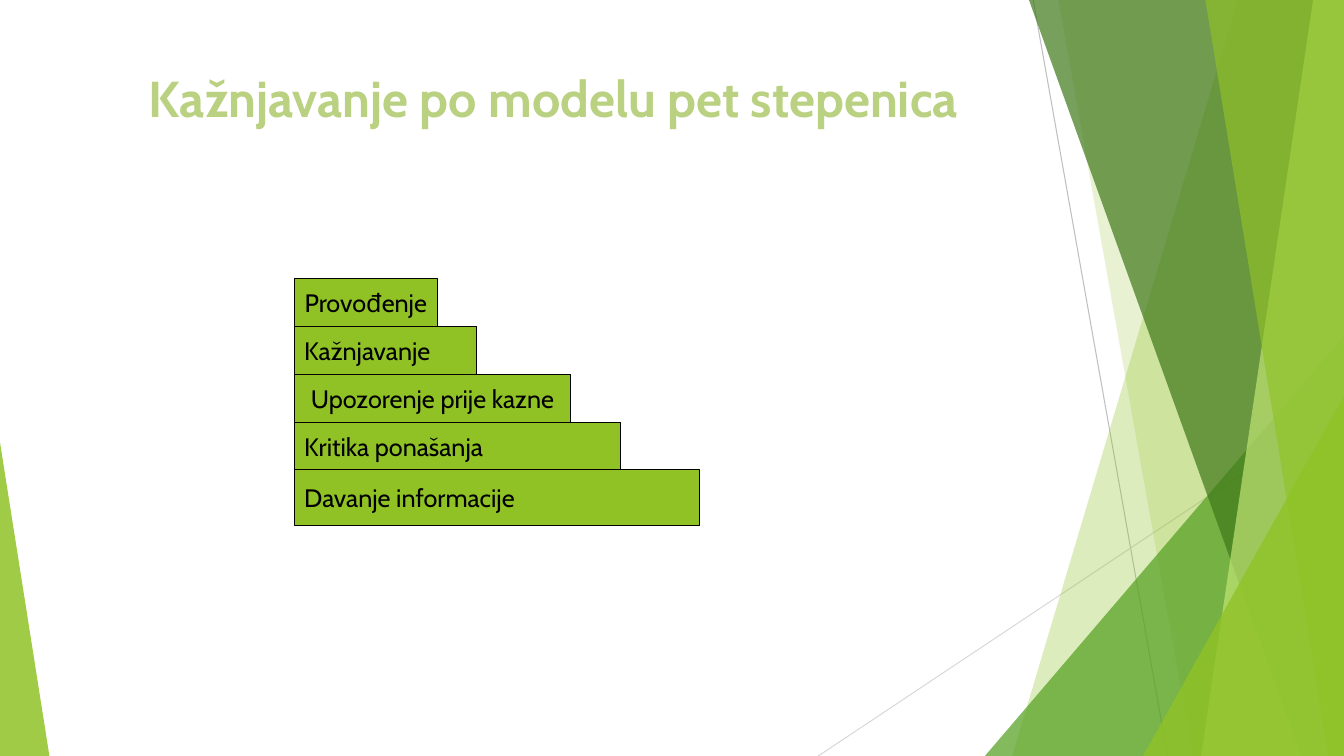
"""Build a slide showing the five steps of punishment as a staircase of bars."""
import dataclasses

import lxml.etree
import pptx
import pptx.dml.color
import pptx.enum.shapes
import pptx.enum.text
import pptx.oxml.ns
import pptx.util

Pt = pptx.util.Pt
ALIGN = pptx.enum.text.PP_ALIGN
ANCHOR = pptx.enum.text.MSO_ANCHOR
SHAPE = pptx.enum.shapes.MSO_SHAPE


@dataclasses.dataclass(frozen=True)
class Theme:
    font: str = "Cabin"
    title_size: float = 36
    step_size: float = 18
    line_width: float = 0.75
    title: str = "B9D181"
    text: str = "000000"
    green: str = "90C226"
    leaf: str = "54A021"
    forest: str = "3F7819"
    lime: str = "C0E474"
    steep_line: str = "BFBFBF"
    flat_line: str = "D9D9D9"


def color(value):
    return pptx.dml.color.RGBColor.from_string(value)


def apply_format(target, values):
    for name, value in values.items():
        setattr(target, name, value)


class SlideBuilder:
    def __init__(self, presentation, theme):
        self.theme = theme
        self.width = presentation.slide_width.pt
        self.height = presentation.slide_height.pt
        self.slide = presentation.slides.add_slide(presentation.slide_layouts[5])

    def set_text(self, shape, text, size, text_color, align, bold, frame_format):
        frame = shape.text_frame
        frame.text = text
        apply_format(frame, frame_format)
        paragraph = frame.paragraphs[0]
        paragraph.alignment = align
        font = paragraph.runs[0].font
        apply_format(font, {"name": self.theme.font, "size": Pt(size), "bold": bold})
        font.color.rgb = color(text_color)

    def paint(self, shape, fill, opacity=100):
        shape.shadow.inherit = False
        shape.fill.solid()
        shape.fill.fore_color.rgb = color(fill)
        shape.line.fill.background()
        if opacity < 100:
            qualified = pptx.oxml.ns.qn
            color_element = shape.element.spPr.find(
                f"{qualified('a:solidFill')}/{qualified('a:srgbClr')}")
            alpha = lxml.etree.SubElement(color_element, qualified("a:alpha"))
            alpha.set("val", str(opacity * 1000))

    def title(self, text, left, top, width, height):
        shape = self.slide.shapes.title
        apply_format(shape, {"left": Pt(left), "top": Pt(top),
                             "width": Pt(width), "height": Pt(height)})
        self.set_text(shape, text, self.theme.title_size, self.theme.title, ALIGN.CENTER,
                      True, {"vertical_anchor": ANCHOR.TOP, "word_wrap": True})

    def line(self, start, end, line_color):
        connector = self.slide.shapes.add_connector(
            pptx.enum.shapes.MSO_CONNECTOR.STRAIGHT, *map(Pt, start + end))
        connector.line.color.rgb = color(line_color)
        connector.line.width = Pt(self.theme.line_width)
        lxml.etree.SubElement(connector.element.spPr, pptx.oxml.ns.qn("a:effectLst"))

    def facet(self, top_left, bottom_left, fill, opacity):
        builder = self.slide.shapes.build_freeform(Pt(top_left), 0)
        corners = [(self.width, 0), (self.width, self.height), (bottom_left, self.height)]
        builder.add_line_segments([(Pt(x), Pt(y)) for x, y in corners])
        self.paint(builder.convert_to_shape(), fill, opacity)

    def triangle(self, left, top, width, apex, fill, opacity):
        shape = self.slide.shapes.add_shape(
            SHAPE.ISOSCELES_TRIANGLE, Pt(left), Pt(top), Pt(width), Pt(self.height - top))
        shape.adjustments[0] = apex
        self.paint(shape, fill, opacity)

    def step(self, text, left, top, width, height, align):
        shape = self.slide.shapes.add_shape(
            SHAPE.RECTANGLE, Pt(left), Pt(top), Pt(width), Pt(height))
        self.paint(shape, self.theme.green)
        shape.line.color.rgb = color(self.theme.text)
        shape.line.width = Pt(self.theme.line_width)
        self.set_text(shape, text, self.theme.step_size, self.theme.text, align, False,
                      {"vertical_anchor": ANCHOR.MIDDLE, "word_wrap": False})


def main():
    presentation = pptx.Presentation()
    presentation.slide_width, presentation.slide_height = Pt(960), Pt(540)
    theme = Theme()
    builder = SlideBuilder(presentation, theme)

    builder.line((738, 0), (834, 540), theme.steep_line)
    builder.line((960, 290), (584.5, 540), theme.flat_line)
    builder.facet(884.2, 723, theme.green, 30)
    builder.facet(756, 852, theme.green, 20)
    builder.triangle(703.5, 240, 256.5, 1, theme.leaf, 72)
    builder.facet(735, 929.5, theme.forest, 70)
    builder.facet(938, 858, theme.lime, 70)
    builder.facet(861, 949, theme.green, 65)
    builder.triangle(816.5, 283, 143.5, 1, theme.green, 80)
    builder.triangle(0, 316, 35.3, 0, theme.green, 85)

    builder.title("Kažnjavanje po modelu pet stepenica", 34.5, 44, 721.5, 126)

    steps = [
        ("Provođenje", 102.2, ALIGN.CENTER),
        ("Kažnjavanje", 130.5, ALIGN.LEFT),
        ("Upozorenje prije kazne", 197.5, ALIGN.CENTER),
        ("Kritika ponašanja", 232.8, ALIGN.LEFT),
        ("Davanje informacije", 289.5, ALIGN.LEFT),
    ]
    left, first_top, step_height, base_height = 210.2, 199.2, 34.1, 39.6
    for index, (text, width, align) in enumerate(steps):
        height = base_height if index == len(steps) - 1 else step_height
        builder.step(text, left, first_top + index * step_height, width, height, align)

    presentation.save("out.pptx")


if __name__ == "__main__":
    main()
